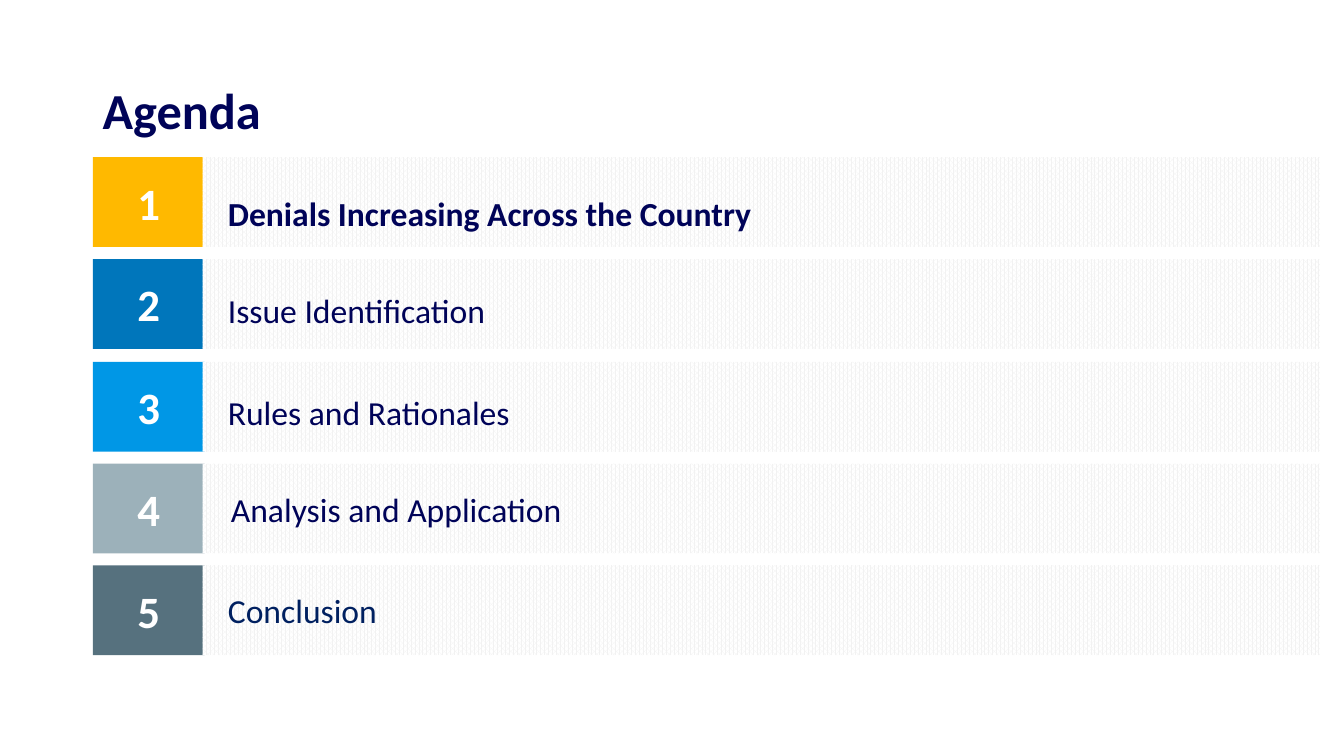
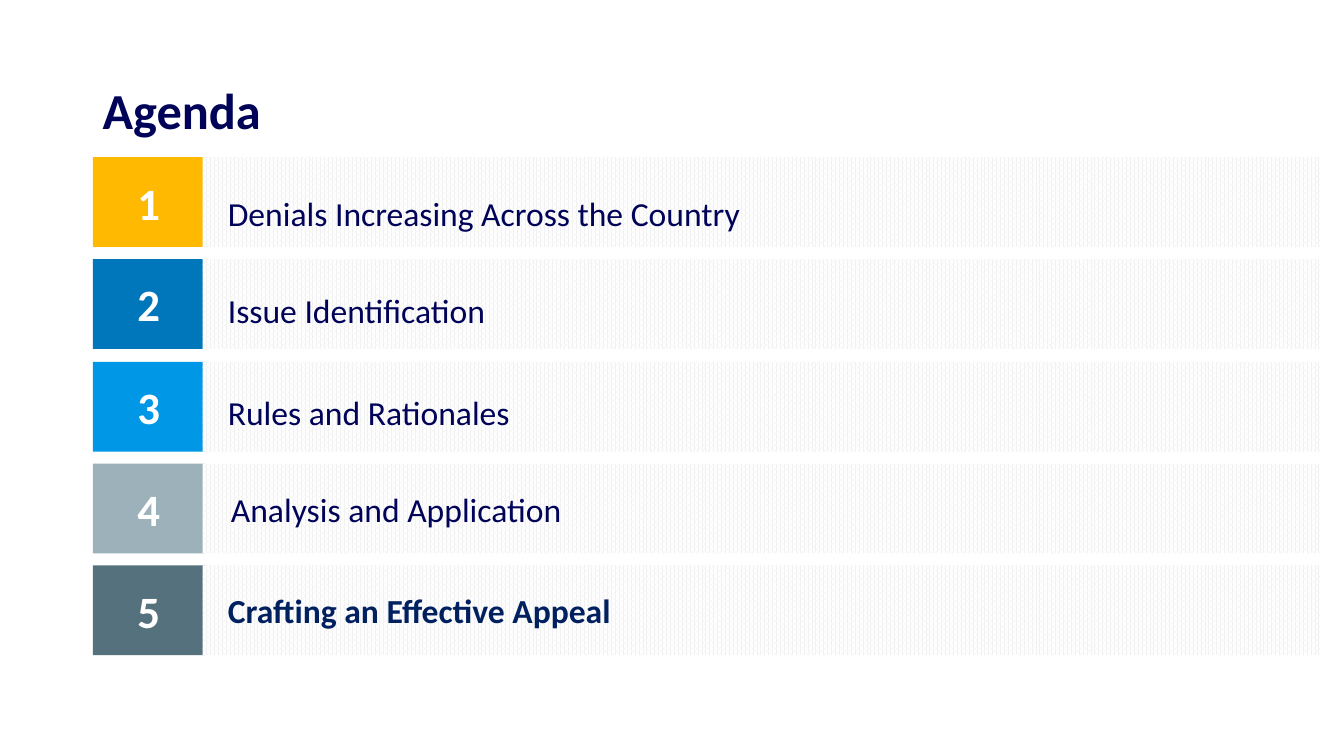
from dataclasses import dataclass
from typing import Any

from pptx import Presentation
from pptx.dml.color import RGBColor
from pptx.enum.dml import MSO_PATTERN
from pptx.enum.shapes import MSO_SHAPE
from pptx.enum.text import MSO_ANCHOR, MSO_AUTO_SIZE, PP_ALIGN
from pptx.util import Pt

RECTANGLE = MSO_SHAPE.RECTANGLE
DOTTED = MSO_PATTERN.PERCENT_75
MIDDLE = MSO_ANCHOR.MIDDLE
GROW = MSO_AUTO_SIZE.SHAPE_TO_FIT_TEXT
LEFT, CENTER = PP_ALIGN.LEFT, PP_ALIGN.CENTER

EMU_PER_PX = 9144  # 100 px to the inch
BLANK_LAYOUT = 6


@dataclass(frozen=True)
class Theme:
    font: str = "Calibri"
    white: str = "FFFFFF"
    navy: str = "000358"
    closing_navy: str = "002060"
    band_dots: str = "F2F2F2"
    title_size: int = 36
    number_size: int = 32
    label_size: int = 24


@dataclass(frozen=True)
class Box:
    left: int
    top: int
    width: int
    height: int

    def emu(self) -> list[int]:
        return [side * EMU_PER_PX for side in (self.left, self.top, self.width, self.height)]


@dataclass(frozen=True)
class Row:
    tile_color: str
    label_left: int = 226
    label_drop: int = 0  # from the top of the row to the top of the label


@dataclass(frozen=True)
class Agenda:
    closing: str
    active: int


THEME = Theme()
TITLE = Box(92, 40, 1150, 145)
ROW_TOP, ROW_HEIGHT, ROW_STEP = 156, 89, 304 / 3
TILE_LEFT, TILE_WIDTH = 92, 111
BAND_LEFT, BAND_WIDTH = 201, 1108
LABEL_WIDTH, LABEL_HEIGHT = 1052, 54
CLOSING_INDENT = 25

ROWS = [
    Row("FFB900", label_drop=18),
    Row("0076BB", label_drop=14),
    Row("0097E6", label_drop=13),
    Row("9CB1BA", label_left=229, label_drop=8),
    Row("56717E"),
]
TOPICS = [
    "Denials Increasing Across the Country",
    "Issue Identification",
    "Rules and Rationales",
    "Analysis and Application",
]
AGENDAS = [Agenda("Conclusion", 0), Agenda("Crafting an Effective Appeal", 4)]


def apply(target: Any, values: dict[str, Any]) -> None:
    for name, value in values.items():
        setattr(target, name, value)


def write(shape: Any, text: str, size: int, color: str, bold: bool,
          frame_format: dict[str, Any] | None = None,
          para_format: dict[str, Any] | None = None) -> None:
    """Put one formatted paragraph into a shape."""
    frame = shape.text_frame
    apply(frame, {"word_wrap": True, "vertical_anchor": MIDDLE} | (frame_format or {}))
    para = frame.paragraphs[0]
    apply(para, {"alignment": LEFT} | (para_format or {}))
    span = para.add_run()
    span.text = text
    apply(span.font, {"name": THEME.font, "size": Pt(size), "bold": bold})
    span.font.color.rgb = RGBColor.from_string(color)


def add_rectangle(page: Any, box: Box) -> Any:
    shape = page.shapes.add_shape(RECTANGLE, *box.emu())
    shape.shadow.inherit = False
    shape.line.fill.background()
    return shape


def add_tile(page: Any, top: int, number: int, color: str) -> None:
    tile = add_rectangle(page, Box(TILE_LEFT, top, TILE_WIDTH, ROW_HEIGHT))
    tile.fill.solid()
    tile.fill.fore_color.rgb = RGBColor.from_string(color)
    write(tile, str(number), THEME.number_size, THEME.white, True,
          para_format={"alignment": CENTER})


def add_band(page: Any, top: int) -> Any:
    band = add_rectangle(page, Box(BAND_LEFT, top, BAND_WIDTH, ROW_HEIGHT))
    band.fill.patterned()
    band.fill.pattern = DOTTED
    band.fill.fore_color.rgb = RGBColor.from_string(THEME.band_dots)
    band.fill.back_color.rgb = RGBColor.from_string(THEME.white)
    return band


def add_label(page: Any, box: Box, text: str, bold: bool) -> None:
    margins = {f"margin_{side}": 0 for side in ("left", "top", "right", "bottom")}
    write(page.shapes.add_textbox(*box.emu()), text, THEME.label_size, THEME.navy, bold,
          frame_format=margins | {"auto_size": GROW},
          para_format={"line_spacing": 1.5, "space_after": Pt(10)})


def add_agenda(deck: Any, agenda: Agenda) -> None:
    page = deck.slides.add_slide(deck.slide_layouts[BLANK_LAYOUT])

    # Title
    write(page.shapes.add_textbox(*TITLE.emu()), "Agenda", THEME.title_size, THEME.navy, True,
          para_format={"line_spacing": 0.9})

    # Numbered rows; the closing topic sits inside its band
    for index, row in enumerate(ROWS):
        top = ROW_TOP + round(index * ROW_STEP)
        bold = index == agenda.active
        add_tile(page, top, index + 1, row.tile_color)
        band = add_band(page, top)
        if index < len(TOPICS):
            box = Box(row.label_left, top + row.label_drop, LABEL_WIDTH, LABEL_HEIGHT)
            add_label(page, box, TOPICS[index], bold)
        else:
            write(band, agenda.closing, THEME.label_size, THEME.closing_navy, bold,
                  frame_format={"margin_left": CLOSING_INDENT * EMU_PER_PX})


def main() -> None:
    deck = Presentation()
    apply(deck, {"slide_width": 1333 * EMU_PER_PX, "slide_height": 750 * EMU_PER_PX})
    for agenda in AGENDAS:
        add_agenda(deck, agenda)
    deck.save("out.pptx")


if __name__ == "__main__":
    main()
